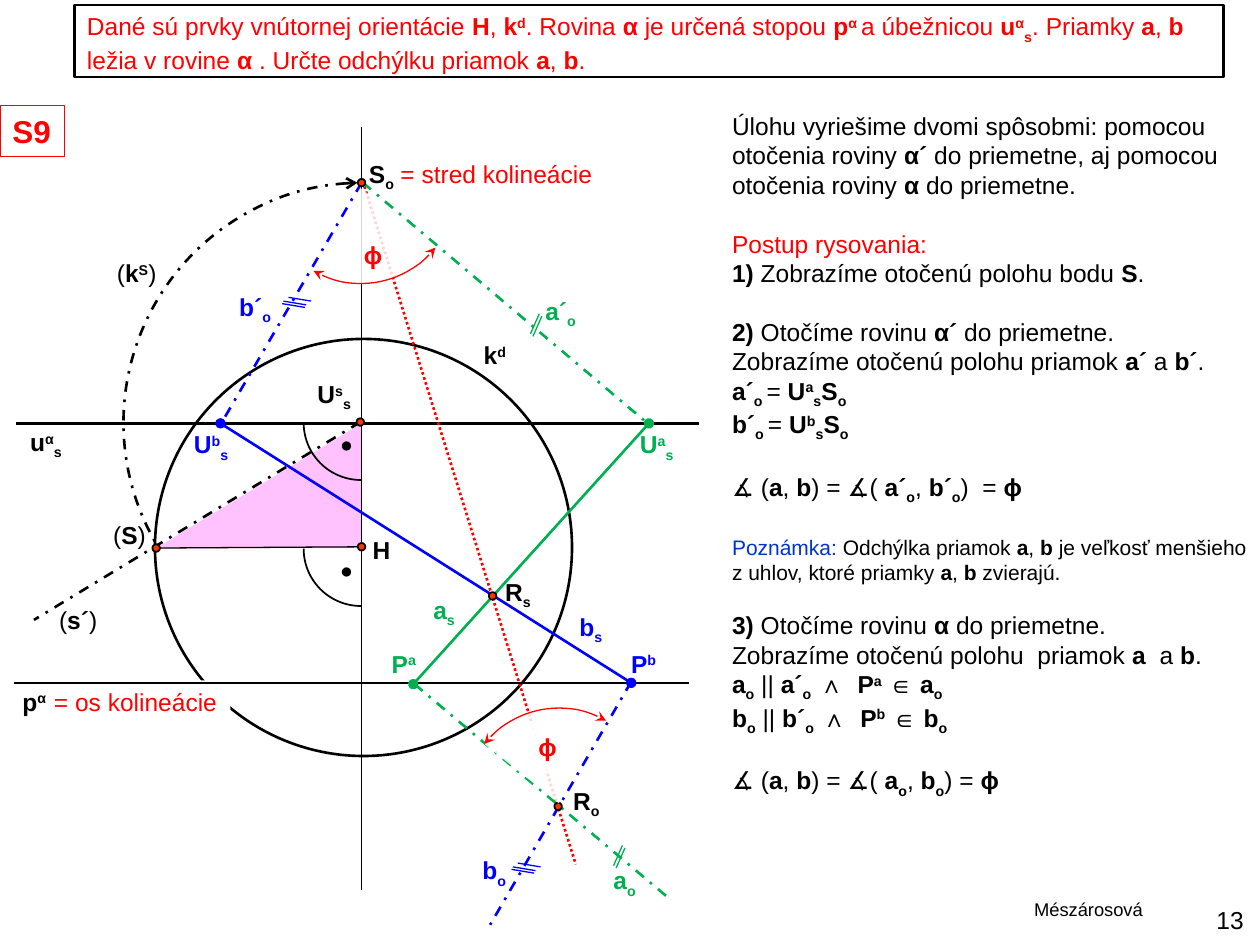
from lxml import etree
from pptx import Presentation
from pptx.dml.color import RGBColor
from pptx.enum.dml import MSO_LINE
from pptx.enum.shapes import MSO_CONNECTOR, MSO_SHAPE
from pptx.enum.text import MSO_ANCHOR, MSO_AUTO_SIZE, PP_ALIGN
from pptx.oxml.ns import qn
from pptx.util import Inches, Pt

BLACK, RED, GREEN, BLUE, WHITE = "000000", "FF0000", "00B050", "0000FF", "FFFFFF"
NOTE, PINK, POINT = "0033CC", "FF00FF", "FF3300"
DASH = MSO_LINE.DASH_DOT

# Text marks: *bold*, ^superscript^, _subscript_, ~accent colour~
TITLE = [
    "Dané sú prvky vnútornej orientácie *H*, *k^d^*. Rovina *α *je určená stopou *p^α ^*"
    "a úbežnicou *u^α^_s_*. Priamky *a*, *b*",
    "ležia v rovine *α *. Určte odchýlku priamok *a*, *b*.",
]
GAP, NOTE_GAP = 16.8, 14.4
BODY = [  # text, space before, size, accent
    ("Úlohu vyriešime dvomi spôsobmi: pomocou otočenia roviny *α´* do priemetne, "
     "aj pomocou otočenia roviny *α *do priemetne.", 0, 14, RED),
    ("~Postup rysovania:~", GAP, 14, RED),
    ("*1) *Zobrazíme otočenú polohu bodu *S*.", 0, 14, RED),
    ("*2) *Otočíme rovinu *α´* do priemetne.", GAP, 14, RED),
    ("Zobrazíme otočenú polohu priamok *a´* a *b´*.", 0, 14, RED),
    ("*a´_o _*= *U^a^_s_S_o_*", 0, 14, RED),
    ("*b´_o _*= *U^b^_s_S_o_*", 0, 14, RED),
    ("∡ (*a*, *b*) = ∡( *a´_o_*, *b´_o_*)  = *ϕ*", GAP, 14, RED),
    ("~Poznámka: ~Odchýlka priamok *a*, *b *je veľkosť menšieho z uhlov, "
     "ktoré priamky *a*, *b* zvierajú.", GAP, 12, NOTE),
    ("*3) *Otočíme rovinu *α *do priemetne.", NOTE_GAP, 14, RED),
    ("Zobrazíme otočenú polohu  priamok *a  *a *b*.", 0, 14, RED),
    ("*a_o_* || *a´_o  _*∧  *P^a^* ∈ *a_o_*", 0, 14, RED),
    ("*b_o_* || *b´_o  _*∧  *P^b^* ∈ *b_o_*", 0, 14, RED),
    ("∡ (*a*, *b*) = ∡( *a_o_*, *b_o_*) = *ϕ*", GAP, 14, RED),
]
LABELS = [  # text, left, top, width, colour
    ("*R_s_*", 3.91, 4.53, 0.42, BLACK), ("= stred kolineácie", 3.08, 1.21, 1.73, RED),
    ("*u^α^_s_*", 0.14, 3.34, 0.48, BLACK), ("*k^d^*", 3.74, 2.65, 0.39, BLACK),
    ("(*S*)", 0.8, 4.08, 0.46, BLACK), ("*S_o_*", 2.83, 1.21, 0.41, BLACK),
    ("*U^s^_s_*", 2.42, 2.96, 0.49, BLACK), ("(*k^S^*)", 0.83, 2, 0.53, BLACK),
    ("(*s´*)", 0.37, 4.75, 0.51, BLACK), ("*p^α^*", 0.08, 5.4, 0.44, BLACK),
    ("*a_s_*", 3.34, 4.67, 0.38, GREEN), ("*P^a^*", 3.01, 5.1, 0.41, GREEN),
    ("*U^a^_s_*", 4.98, 3.36, 0.49, GREEN), ("*a´_o_*", 4.23, 2.3, 0.46, GREEN),
    ("*a_o_*", 4.77, 6.82, 0.39, GREEN), ("*R_o_*", 4.45, 6.19, 0.42, BLACK),
    ("*b_s_*", 4.5, 4.81, 0.39, BLUE), ("*b´_o_*", 1.8, 2.27, 0.47, BLUE),
    ("*U^b^_s_*", 1.44, 3.36, 0.5, BLUE), ("*H*", 2.86, 4.2, 0.34, BLACK),
    ("*P^b^*", 4.91, 5.1, 0.41, BLUE), ("*b_o_*", 3.73, 6.74, 0.4, BLUE),
]
LINES = [  # x1, y1, x2, y2, colour, width, dash, both ends
    (0.13, 3.36, 5.55, 3.36, BLACK, 1.5, None, None),
    (2.88, 1.44, 4.57, 6.86, RED, 1.5, MSO_LINE.ROUND_DOT, None),
    (2.87, 1.01, 2.87, 7.06, BLACK, 0.75, None, None),
    (2.86, 3.35, 0.27, 4.92, BLACK, 1.5, DASH, None),
    (0.11, 5.42, 5.47, 5.42, BLACK, 1.5, None, None),
    (3.28, 5.43, 5.15, 3.36, GREEN, 1.5, None, "oval"),
    (2.88, 1.45, 5.14, 3.36, GREEN, 1.5, DASH, None),
    (3.29, 5.43, 5.31, 7.13, GREEN, 1.5, DASH, None),
    (1.22, 4.35, 2.87, 4.34, BLACK, 0.75, None, None),
    (2.87, 1.45, 1.75, 3.37, BLUE, 1.5, DASH, None),
    (5.01, 5.41, 3.89, 7.34, BLUE, 1.5, DASH, None),
    (1.75, 3.36, 5.01, 5.42, BLUE, 1.5, None, "oval"),
]
TICKS = [  # starting points, direction, shifts of the parallel strokes, colour
    ([(4.21, 2.65), (4.87, 6.87)], (0.07, -0.16), [(0, 0), (0.02, 0.02)], GREEN),
    ([(4.24, 6.93), (2.42, 2.44)], (-0.18, -0.03),
     [(0, 0), (0.01, -0.02), (0.05, -0.05)], BLUE),
]
POINTS = [(2.83, 3.32), (2.84, 1.42), (1.21, 4.32), (3.88, 4.7), (4.4, 6.37), (2.84, 4.31)]
RIGHT_ANGLES = [2.9, 3.9]


def rgb(color):
    return RGBColor.from_string(color)


def set_fill(s, color, alpha=100):
    if color is None:
        s.fill.background()
        return
    s.fill.solid()
    s.fill.fore_color.rgb = rgb(color)
    if alpha < 100:
        clr = s._element.spPr.find(qn("a:solidFill"))[0]
        etree.SubElement(clr, qn("a:alpha"), val=str(alpha * 1000))


def set_line(s, color, width, dash=None, head=None, tail=None):
    s.line.color.rgb = rgb(color)
    s.line.width = Pt(width)
    if dash:
        s.line.dash_style = dash
    for tag, kind in (("a:headEnd", head), ("a:tailEnd", tail)):
        if kind:
            etree.SubElement(s.line._get_or_add_ln(), qn(tag), type=kind)


def write(p, marked, color, size=14, accent=RED):
    """Fill a paragraph with runs, reading the text marks."""
    state = dict.fromkeys("*^_~", False)

    def add_run(part):
        r = p.add_run()
        r.text = part
        f = r.font
        f.name, f.size, f.bold = "Arial", Pt(size), state["*"]
        f.color.rgb = rgb(accent if state["~"] else color)
        if state["^"] or state["_"]:
            r._r.get_or_add_rPr().set("baseline", "30000" if state["^"] else "-25000")

    part = ""
    for ch in marked:
        if ch not in state:
            part += ch
            continue
        if part:
            add_run(part)
        part = ""
        state[ch] = not state[ch]
    if part:
        add_run(part)


def place(s, x, y, w, h):
    s.left, s.top, s.width, s.height = map(Inches, (x, y, w, h))


def label(marked, x, y, w, color, h=0.34, size=14, align=PP_ALIGN.LEFT):
    s = slide.shapes.add_textbox(*map(Inches, (x, y, w, h)))
    tf = s.text_frame
    tf.word_wrap, tf.auto_size = False, MSO_AUTO_SIZE.SHAPE_TO_FIT_TEXT
    tf.paragraphs[0].alignment = align
    write(tf.paragraphs[0], marked, color, size)
    return s


def line(x1, y1, x2, y2, color, width, dash=None, ends=None):
    s = slide.shapes.add_connector(MSO_CONNECTOR.STRAIGHT, *map(Inches, (x1, y1, x2, y2)))
    set_line(s, color, width, dash, ends, ends)
    etree.SubElement(s._element.spPr, qn("a:effectLst"))


def round_shape(kind, x, y, d, color, width, fill=None, alpha=100, flips="", angles=None,
                **line_style):
    """Circle or arc of diameter d; angles are the raw arc adjustments."""
    s = slide.shapes.add_shape(kind, *map(Inches, (x, y, d, d)))
    s.shadow.inherit = False
    for i, angle in enumerate(angles or []):
        s.adjustments[i] = angle
    for flip in flips:
        s._element.spPr.xfrm.set("flip" + flip, "1")
    set_fill(s, fill, alpha)
    set_line(s, color, width, **line_style)


prs = Presentation()
prs.slide_width, prs.slide_height = Inches(10), Inches(7.5)
slide = prs.slides.add_slide(prs.slide_layouts[1])

title, body = slide.placeholders
place(title, 0.59, 0.04, 9.12, 0.57)
set_fill(title, WHITE, 12)
set_line(title, BLACK, 1.5)
place(body, 5.71, 0.83, 4.29, 5.26)
body_rows = BODY
title_rows = [(row, 0, 14, RED) for row in TITLE]
for s, rows, color in ((title, title_rows, RED), (body, body_rows, BLACK)):
    tf = s.text_frame
    tf.word_wrap, tf.auto_size = s is body, MSO_AUTO_SIZE.NONE
    tf.vertical_anchor = MSO_ANCHOR.TOP
    for i, (marked, before, size, accent) in enumerate(rows):
        p = tf.add_paragraph() if i else tf.paragraphs[0]
        p.alignment, p.space_before = PP_ALIGN.LEFT, Pt(before)
        pPr = p._p.get_or_add_pPr()
        pPr.set("marL", "0")
        pPr.set("indent", "0")
        etree.SubElement(pPr, qn("a:buNone"))
        write(p, marked, color, size, accent)

builder = slide.shapes.build_freeform(Inches(2.87), Inches(3.36), scale=1.0)
builder.add_line_segments([(Inches(1.24), Inches(4.35)), (Inches(2.87), Inches(4.35))])
triangle = builder.convert_to_shape()
triangle.shadow.inherit = False
set_fill(triangle, PINK, 24)
triangle.line.fill.background()

round_shape(MSO_SHAPE.OVAL, 1.23, 2.69, 3.31, BLACK, 1.5)
set_fill(label("= os kolineácie", 0.33, 5.4, 1.5, RED), WHITE)
set_line(label("*S9*", 0, 0.84, 0.51, RED, 0.4, 18), RED, 0.75)
for item in LABELS:
    label(*item)
for item in LINES:
    line(*item)
for starts, (dx, dy), shifts, color in TICKS:
    for x, y in starts:
        for sx, sy in shifts:
            line(x + sx, y + sy, x + sx + dx, y + sy + dy, color, 0.75)

round_shape(MSO_SHAPE.ARC, 0.98, 1.45, 3.81, BLACK, 1.5, flips="H",
            angles=(162.86, 18.56), dash=DASH, head="arrow")
for y in RIGHT_ANGLES:
    round_shape(MSO_SHAPE.ARC, 2.41, y, 0.91, BLACK, 1, flips="HV")
    round_shape(MSO_SHAPE.OVAL, 2.72, y + 0.61, 0.06, BLACK, 1, BLACK)
for x, y in POINTS:
    round_shape(MSO_SHAPE.OVAL, x, y, 0.06, BLACK, 1, POINT)
for x, y, flip in ((2.11, 0.74, "V"), (3.68, 5.62, "H")):
    round_shape(MSO_SHAPE.ARC, x, y, 1.51, RED, 0.75, WHITE, 84, flip,
                (144.07, 192.91), head="stealth", tail="stealth")

label("*ϕ*", 2.79, 1.86, 0.32, RED)
phi = label("*ϕ*", 4.17, 5.73, 0.35, RED, 0.4, align=PP_ALIGN.CENTER)
phi.text_frame.auto_size = MSO_AUTO_SIZE.NONE
phi.text_frame.vertical_anchor = MSO_ANCHOR.MIDDLE
set_fill(phi, WHITE, 84)
label("13", 9.53, 7.13, 0.44, BLACK, align=PP_ALIGN.RIGHT)
label("Mészárosová", 8.11, 7.08, 1.08, BLACK, 0.28, 10.5)

prs.save("out.pptx")
